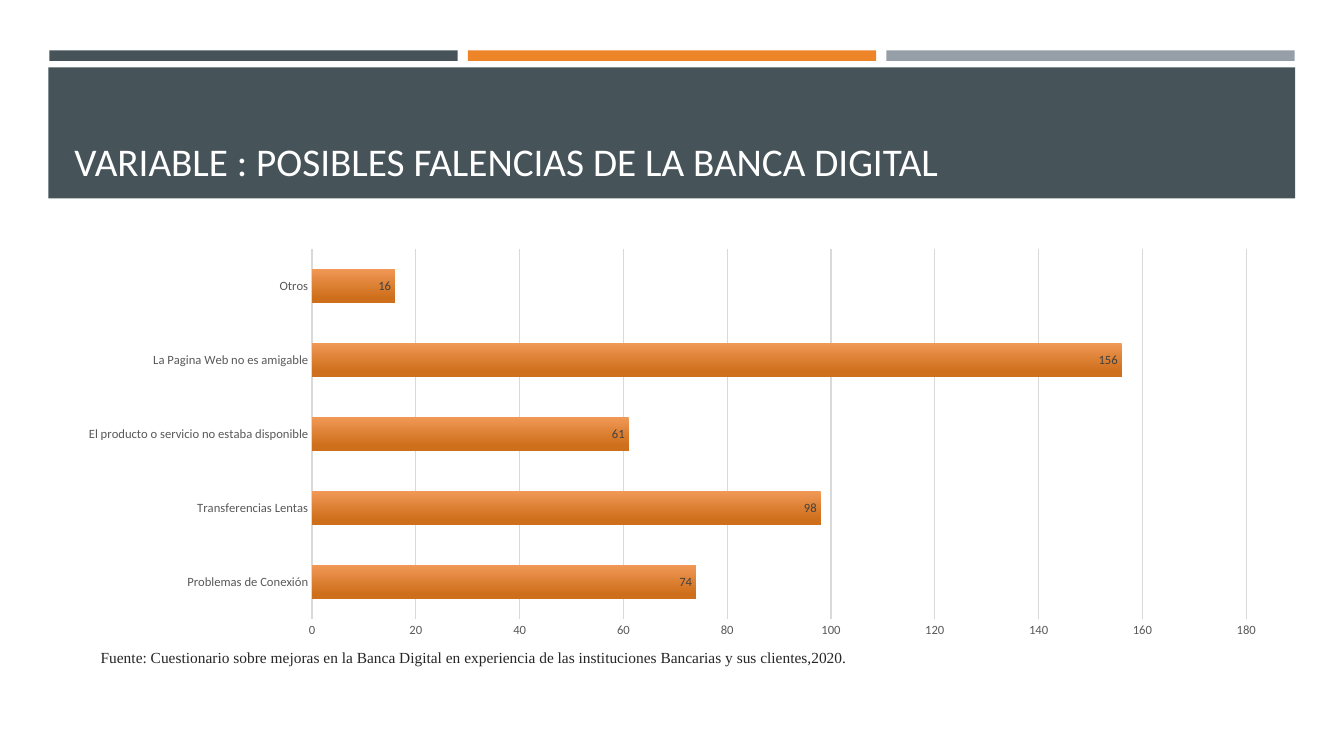
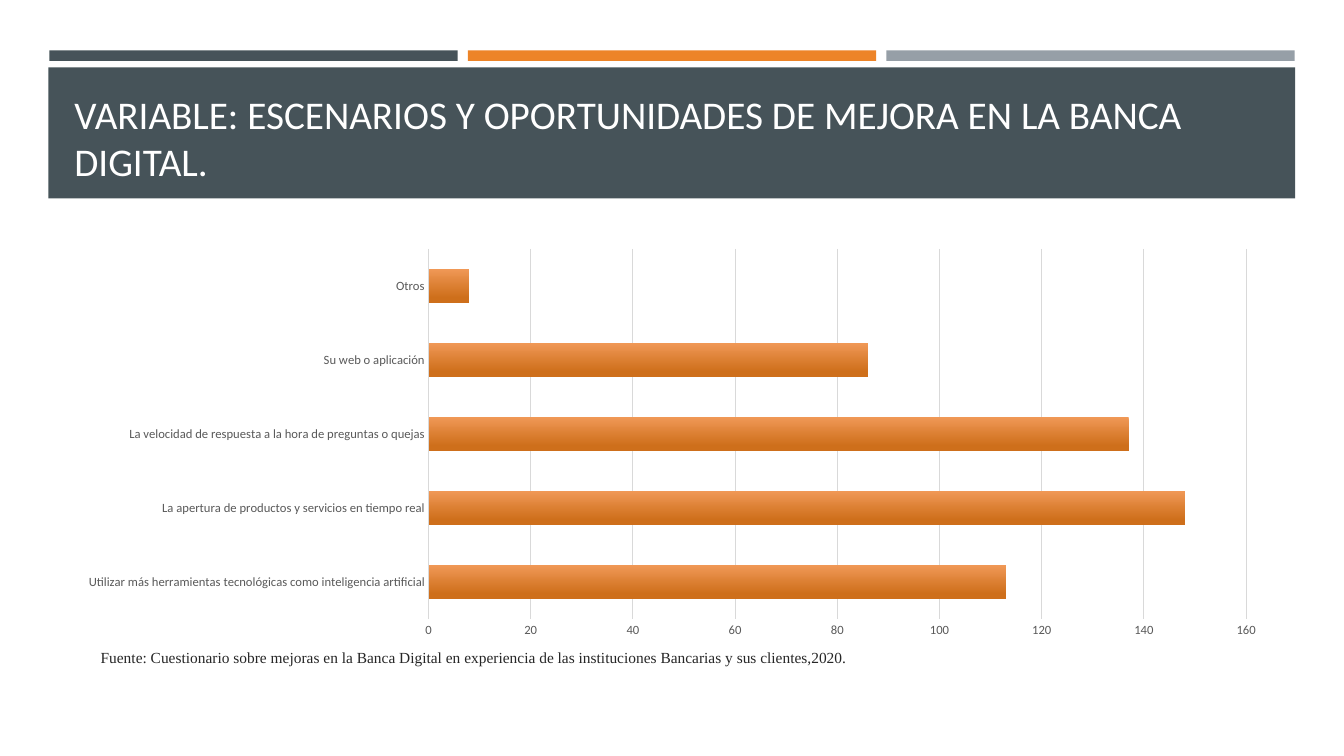
from pptx import Presentation
from pptx.chart.data import CategoryChartData as ChartData
from pptx.dml.color import RGBColor as RGB
from pptx.enum.chart import XL_CHART_TYPE as Kind
from pptx.enum.chart import XL_LABEL_POSITION as LabelPos
from pptx.enum.chart import XL_TICK_MARK as Tick
from pptx.enum.shapes import MSO_SHAPE as Shape
from pptx.enum.text import MSO_ANCHOR as Anchor
from pptx.enum.text import MSO_AUTO_SIZE as Fit
from pptx.util import Pt

HEX = {
    "slate": "465359", "orange": "ED8428", "gray": "969FA7",
    "white": "FFFFFF", "black": "000000", "ink": "262626",
    "axis": "595959", "label": "404040", "grid": "D9D9D9",
    "light": "F09856", "dark": "CE6F1B",
}
SANS, SERIF = "Calibri", "Times New Roman"

# Boxes: left, top, width, height in points
STRIPS = (35.2, 36, 889.6, 7.5)
BAND = (34.6, 48.2, 890.6, 93.6)
TITLE = (46.1, 55.4, 868.3, 79.9)
CHART = (46.1, 172.1, 868.3, 289.4)
SOURCE = (64.8, 446.4, 580.3, 30.2)
GAP = 7.3

NOTE = ("Fuente: Cuestionario sobre mejoras en la Banca Digital en experiencia "
        "de las instituciones Bancarias y sus clientes,2020.")

SLIDES = [
    {"title": "VARIABLE : POSIBLES FALENCIAS DE LA BANCA DIGITAL",
     "data": [("Problemas de Conexión", 74),
              ("Transferencias Lentas", 98),
              ("El producto o servicio no estaba disponible", 61),
              ("La Pagina Web no es amigable", 156),
              ("Otros", 16)],
     "top": 180, "labels": True},
    {"title": "VARIABLE: ESCENARIOS Y OPORTUNIDADES DE MEJORA EN LA BANCA DIGITAL.",
     "data": [("Utilizar más herramientas tecnológicas como inteligencia artificial", 113),
              ("La apertura de productos y servicios en tiempo real", 148),
              ("La velocidad de respuesta a la hora de preguntas o quejas", 137),
              ("Su web o aplicación", 86),
              ("Otros", 8)],
     "top": 160, "labels": False},
]


def color(name):
    return RGB.from_string(HEX[name])


def place(box):
    return [Pt(n) for n in box]


def style(font, size, name, face=SANS):
    font.size, font.name = Pt(size), face
    font.color.rgb = color(name)


def rect(slide, box, name):
    shape = slide.shapes.add_shape(Shape.RECTANGLE, *place(box))
    shape.shadow.inherit = False
    shape.fill.solid()
    shape.fill.fore_color.rgb = color(name)
    shape.line.fill.background()


def text(slide, box, words, size, name, face=SANS):
    frame = slide.shapes.add_textbox(*place(box)).text_frame
    frame.word_wrap = True
    run = frame.paragraphs[0].add_run()
    run.text = words
    style(run.font, size, name, face)
    return frame


def header(slide, words):
    # Three strips of equal width above the title band
    left, top, width, height = STRIPS
    names = ("slate", "orange", "gray")
    part = (width - GAP * (len(names) - 1)) / len(names)
    for i, name in enumerate(names):
        rect(slide, (left + i * (part + GAP), top, part, height), name)
    rect(slide, BAND, "slate")
    frame = text(slide, TITLE, words, 28, "white")
    frame.vertical_anchor = Anchor.BOTTOM


def axes(chart, top):
    cat, val = chart.category_axis, chart.value_axis
    for axis in (cat, val):
        axis.major_tick_mark = axis.minor_tick_mark = Tick.NONE
        style(axis.tick_labels.font, 9, "axis")
    cat.format.line.width = Pt(1)
    cat.format.line.color.rgb = color("grid")
    val.format.line.fill.background()
    val.minimum_scale, val.maximum_scale, val.major_unit = 0, top, 20
    val.has_major_gridlines = True
    grid = val.major_gridlines.format.line
    grid.width = Pt(0.75)
    grid.color.rgb = color("grid")


def bars(slide, box, rows, top, labels):
    data = ChartData()
    data.categories = [cat for cat, _ in rows]
    data.add_series("Series 1", [num for _, num in rows])
    chart = slide.shapes.add_chart(Kind.BAR_CLUSTERED, *place(box), data).chart
    chart.has_title = chart.has_legend = False
    style(chart.font, 10, "black")
    axes(chart, top)

    plot = chart.plots[0]
    plot.gap_width, plot.overlap = 115, -20
    plot.vary_by_categories = False

    # Vertical gradient, light at the top
    fill = plot.series[0].format.fill
    fill.gradient()
    fill.gradient_angle = 270
    for stop, name, pos in zip(fill.gradient_stops, ("light", "dark"), (0, 0.84)):
        stop.color.rgb = color(name)
        stop.position = pos

    if labels:
        plot.has_data_labels = True
        tags = plot.data_labels
        tags.show_value = True
        tags.position = LabelPos.INSIDE_END
        style(tags.font, 9, "label")


def source(slide):
    frame = text(slide, SOURCE, NOTE, 11, "ink", SERIF)
    frame.auto_size = Fit.SHAPE_TO_FIT_TEXT
    para = frame.paragraphs[0]
    para.line_spacing = 2.0
    para.space_after = Pt(8)


def main():
    deck = Presentation()
    deck.slide_width, deck.slide_height = Pt(960), Pt(540)
    for item in SLIDES:
        slide = deck.slides.add_slide(deck.slide_layouts[6])
        header(slide, item["title"])
        bars(slide, CHART, item["data"], item["top"], item["labels"])
        source(slide)
    deck.save("out.pptx")


if __name__ == "__main__":
    main()
